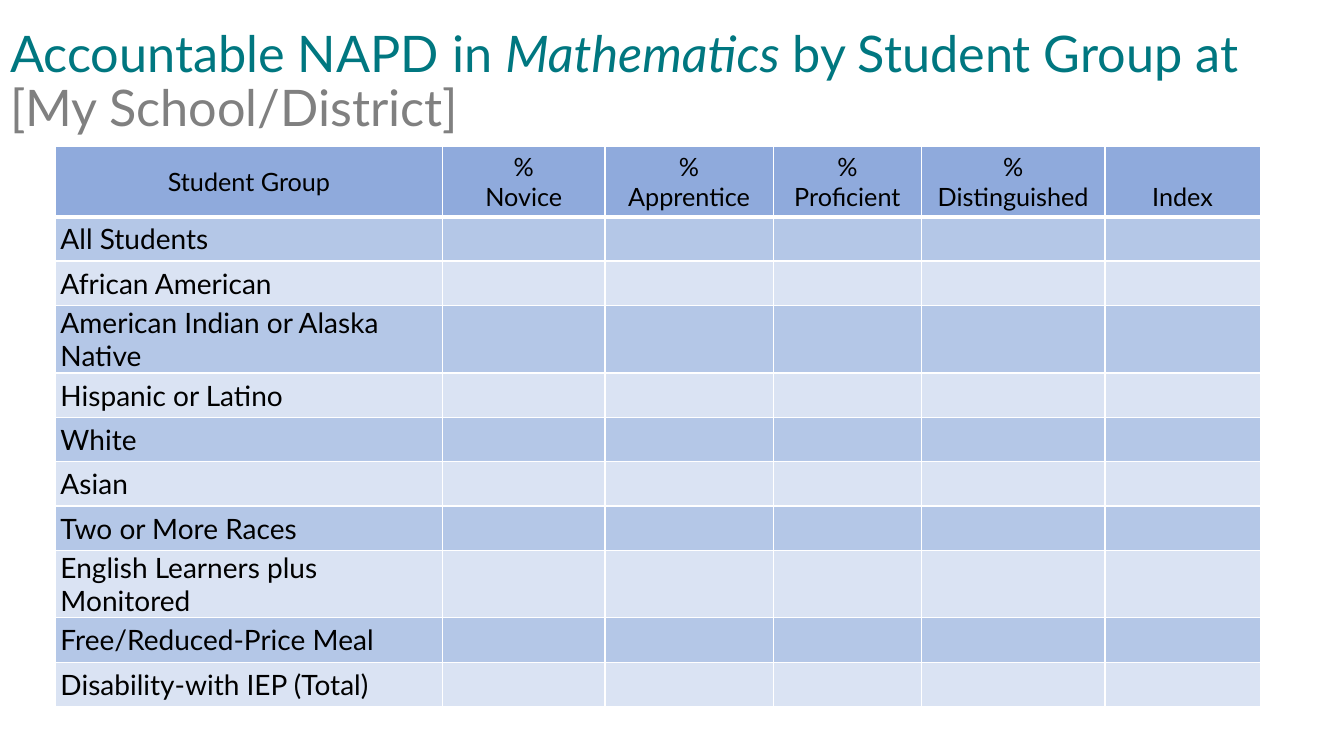
from lxml.etree import SubElement
from pptx import Presentation
from pptx.dml.color import RGBColor
from pptx.enum.text import MSO_ANCHOR, MSO_AUTO_SIZE, PP_ALIGN
from pptx.oxml.ns import qn
from pptx.util import Inches, Pt

FONT = "Lato"
COLORS = {
    "title": "007780",
    "placeholder": "808080",
    "text": "000000",
    "header": "8FAADC",
    "band_dark": "B4C7E7",
    "band_light": "DAE3F3",
    "border": "FFFFFF",
}
COL_WIDTHS = [3.84, 1.61, 1.67, 1.47, 1.82, 1.54]
ROW_HEIGHT, TALL_ROW, HEADER_ROW = 0.44, 0.67, 0.69
HEADERS = [
    ["Student Group"],
    ["%", "Novice"],
    ["%", "Apprentice"],
    ["%", "Proficient"],
    ["% Distinguished"],
    ["Index"],
]
GROUPS = [
    "All Students",
    "African American",
    "American Indian or Alaska Native",
    "Hispanic or Latino",
    "White",
    "Asian",
    "Two or More Races",
    "English Learners plus Monitored",
    "Free/Reduced-Price Meal",
    "Disability-with IEP (Total)",
]
TWO_LINE_GROUPS = {"American Indian or Alaska Native", "English Learners plus Monitored"}


def add_run(p, text, size, color, italic=False):
    r = p.add_run()
    r.text = text
    r.font.name = FONT
    r.font.size = Pt(size)
    r.font.bold = False
    r.font.italic = italic
    r.font.color.rgb = RGBColor.from_string(COLORS[color])


def add_title(s):
    title = s.shapes.title
    title.left, title.top = Inches(0), Inches(0)
    title.width, title.height = Inches(12.88), Inches(1.65)
    tf = title.text_frame
    tf.word_wrap = True
    tf.auto_size = MSO_AUTO_SIZE.NONE
    tf.vertical_anchor = MSO_ANCHOR.MIDDLE
    p = tf.paragraphs[0]
    p.alignment = PP_ALIGN.LEFT
    p.line_spacing = 0.9
    add_run(p, "Accountable NAPD in ", 36, "title")
    add_run(p, "Mathematics", 36, "title", italic=True)
    add_run(p, " by Student Group at ", 36, "title")
    add_run(p, "[My School/District]", 36, "placeholder")


def style_cell(cell, fill, bottom=1):
    # Borders come before the fill in the cell properties
    tc_pr = cell._tc.get_or_add_tcPr()
    for side, width in (("L", 1), ("R", 1), ("T", 1), ("B", bottom)):
        line = SubElement(tc_pr, qn(f"a:ln{side}"), w=str(Pt(width)))
        solid = SubElement(line, qn("a:solidFill"))
        SubElement(solid, qn("a:srgbClr"), val=COLORS["border"])
    cell.fill.solid()
    cell.fill.fore_color.rgb = RGBColor.from_string(COLORS[fill])
    cell.vertical_anchor = MSO_ANCHOR.MIDDLE


def fill_header(cell, lines):
    style_cell(cell, "header", bottom=3)
    if lines == ["Index"]:
        cell.vertical_anchor = MSO_ANCHOR.BOTTOM
    tf = cell.text_frame
    for i, line in enumerate(lines):
        p = tf.add_paragraph() if i else tf.paragraphs[0]
        p.alignment = PP_ALIGN.CENTER
        add_run(p, line, 18, "text")


def fill_group(cell, group):
    cell.margin_left = cell.margin_right = Inches(0.05)
    cell.margin_top = cell.margin_bottom = Inches(0)
    add_run(cell.text_frame.paragraphs[0], group, 20, "text")


def add_group_table(s):
    heights = [HEADER_ROW] + [
        TALL_ROW if group in TWO_LINE_GROUPS else ROW_HEIGHT for group in GROUPS
    ]
    table = s.shapes.add_table(
        len(heights), len(COL_WIDTHS), Inches(0.55), Inches(1.45),
        Inches(sum(COL_WIDTHS)), Inches(sum(heights)),
    ).table
    for column, width in zip(table.columns, COL_WIDTHS):
        column.width = Inches(width)
    for row, height in zip(table.rows, heights):
        row.height = Inches(height)

    # Header row
    for col, lines in enumerate(HEADERS):
        fill_header(table.cell(0, col), lines)

    # Banded rows, with results left open
    for row, group in enumerate(GROUPS, start=1):
        for col in range(len(COL_WIDTHS)):
            style_cell(table.cell(row, col), "band_dark" if row % 2 else "band_light")
        fill_group(table.cell(row, 0), group)


def main():
    prs = Presentation()
    prs.slide_width, prs.slide_height = Inches(13.33), Inches(7.5)
    s = prs.slides.add_slide(prs.slide_layouts.get_by_name("Title Only"))
    add_title(s)
    add_group_table(s)
    prs.save("out.pptx")


if __name__ == "__main__":
    main()
